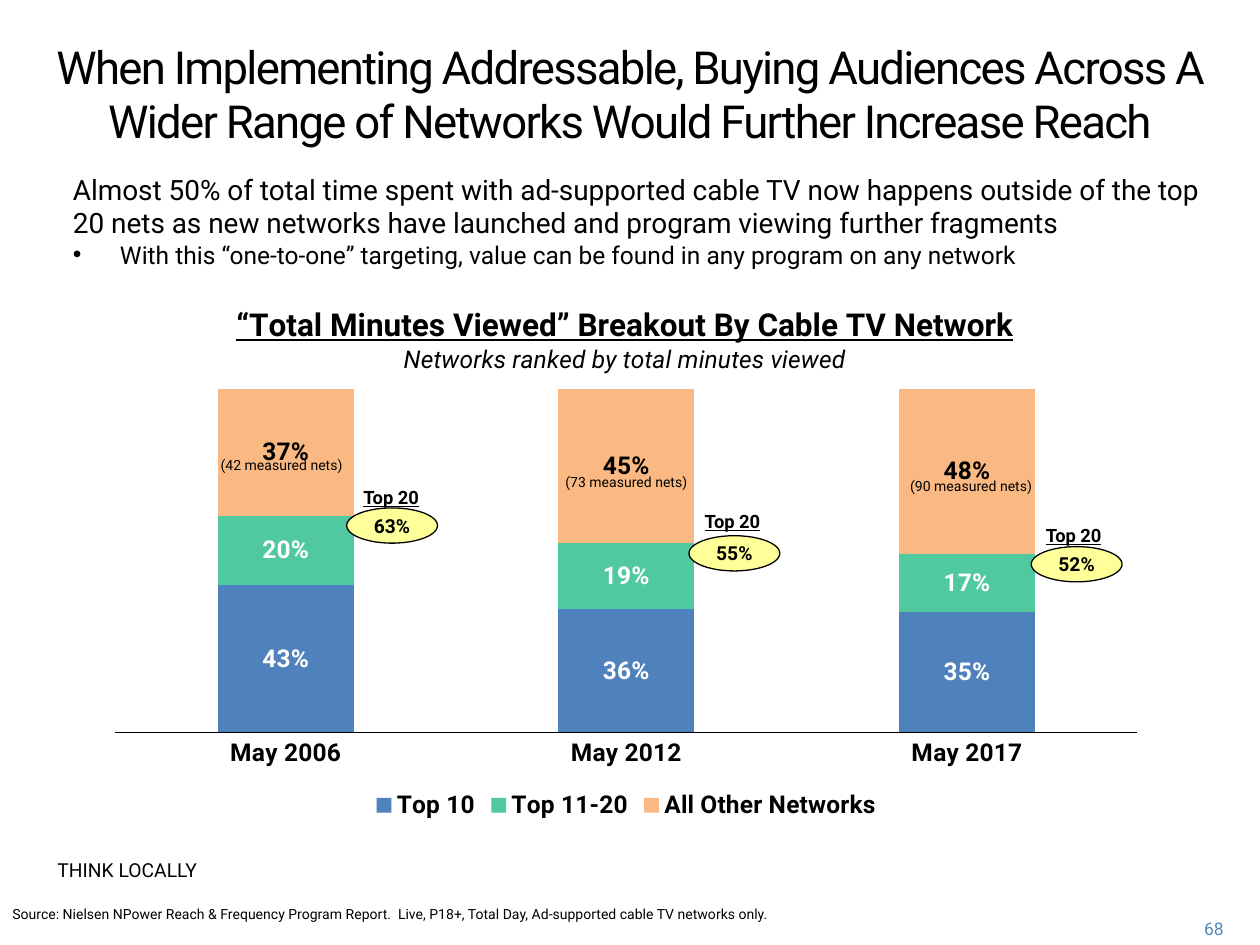
from collections import namedtuple

from lxml import etree
from pptx import Presentation
from pptx import util as u
from pptx.chart.data import CategoryChartData
from pptx.dml.color import RGBColor
from pptx.enum import chart as ch, shapes, text
from pptx.oxml import parse_xml
from pptx.oxml.ns import nsdecls, qn

BLACK = RGBColor(0, 0, 0)
WHITE = RGBColor(0xFF, 0xFF, 0xFF)
PAGE_BLUE = RGBColor(0x50, 0x8A, 0xBA)
BLUE = RGBColor(0x4F, 0x81, 0xBD)
GREEN = RGBColor(0x50, 0xC8, 0xA0)
ORANGE = RGBColor(0xFA, 0xB9, 0x82)
YELLOW = RGBColor(0xFF, 0xFF, 0x99)
FONT = "Roboto"
LEFT, CENTER, RIGHT = text.PP_ALIGN.LEFT, text.PP_ALIGN.CENTER, text.PP_ALIGN.RIGHT

Box = namedtuple("Box", "left top width height")
Callout = namedtuple("Callout", "share nets oval_top label_top nets_top")

MONTHS = ["May 2006", "May 2012", "May 2017"]
SERIES = [
    ("Top 10", [0.43, 0.36, 0.35], BLUE, WHITE),
    ("Top 11-20", [0.20, 0.19, 0.17], GREEN, WHITE),
    ("All Other Networks", [0.37, 0.45, 0.48], ORANGE, BLACK),
]
CALLOUTS = [
    Callout("63%", 42, 4.60, 4.04, 3.43),
    Callout("55%", 73, 5.16, 4.52, 3.78),
    Callout("52%", 90, 5.38, 4.80, 3.86),
]


def style(font, size, color=BLACK, bold=False, italic=False, underline=False):
    """Apply the slide's typeface and the given look to a font."""
    font.name, font.size, font.color.rgb = FONT, u.Pt(size), color
    font.bold, font.italic, font.underline = bold, italic, underline


def in_cm(box):
    """Turn a box in centimetres into four lengths."""
    return [u.Cm(length) for length in box]


def add_text(slide, box, words, size, align=LEFT, **look):
    """Place a wrapped text box with one paragraph and return its frame."""
    frame = slide.shapes.add_textbox(*in_cm(box)).text_frame
    frame.word_wrap = True
    frame.text = words
    paragraph = frame.paragraphs[0]
    paragraph.alignment = align
    style(paragraph.runs[0].font, size, **look)
    return frame


def add_headline(slide, box):
    """Place the slide title, centred and tightly spaced."""
    headline = add_text(
        slide, box, "When Implementing Addressable, Buying Audiences Across A "
        "Wider Range of Networks Would Further Increase Reach", 26, CENTER)
    headline.margin_left = headline.margin_right = 0
    headline.margin_top = headline.margin_bottom = 0
    headline.vertical_anchor = text.MSO_ANCHOR.MIDDLE
    headline.paragraphs[0].runs[0].font._element.set("spc", "-100")


def add_summary(slide, box):
    """Place the lead sentence and its bullet."""
    summary = add_text(
        slide, box, "Almost 50% of total time spent with ad-supported cable TV now "
        "happens outside of the top 20 nets as new networks have launched and "
        "program viewing further fragments", 16)
    point = summary.add_paragraph()
    point.text = ("With this “one-to-one” targeting, value can be found "
                  "in any program on any network")
    properties = point._p.get_or_add_pPr()
    indent = u.Cm(0.95)
    properties.set("marL", str(indent))
    properties.set("indent", str(-indent))
    etree.SubElement(properties, qn("a:buFont")).set("typeface", "Arial")
    etree.SubElement(properties, qn("a:buChar")).set("char", "•")
    style(point.runs[0].font, 14)


def manual_layout(inner=False, **fractions):
    """Build a chart layout element from fractions of the chart area."""
    target = '<c:layoutTarget val="inner"/>' if inner else ""
    modes = "".join(f'<c:{key}Mode val="edge"/>' for key in "xy")
    values = "".join(f'<c:{key} val="{value}"/>' for key, value in fractions.items())
    return parse_xml(f'<c:layout {nsdecls("c")}><c:manualLayout>{target}{modes}{values}'
                     "</c:manualLayout></c:layout>")


def set_layout(parent, layout, position):
    """Replace the layout of a chart part."""
    for old in parent.findall(qn("c:layout")):
        parent.remove(old)
    parent.insert(position, layout)


def add_chart_title(chart):
    """Write the heading and subheading of the chart."""
    title = chart.chart_title
    heading = title.text_frame
    heading.text = "“Total Minutes Viewed” Breakout By Cable TV Network"
    style(heading.paragraphs[0].runs[0].font, 18, bold=True, underline=True)
    subheading = heading.add_paragraph()
    subheading.text = "Networks ranked by total minutes viewed"
    style(subheading.runs[0].font, 14, italic=True)
    title.include_in_layout = False
    set_layout(title._element, manual_layout(x=0.13, y=0.04), 1)


def add_viewing_chart(slide, box):
    """Place the stacked chart of viewing shares."""
    data = CategoryChartData(number_format="0%")
    data.categories = MONTHS
    for name, shares, _, _ in SERIES:
        data.add_series(name, shares)
    chart = slide.shapes.add_chart(
        ch.XL_CHART_TYPE.COLUMN_STACKED_100, *in_cm(box), data).chart
    style(chart.font, 10)
    add_chart_title(chart)

    plot = chart.plots[0]
    plot.gap_width, plot.overlap, plot.vary_by_categories = 150, 100, False
    for series, (_, _, fill, label_color) in zip(plot.series, SERIES):
        series.format.fill.solid()
        series.format.fill.fore_color.rgb = fill
        labels = series.data_labels
        labels.show_value = True
        labels.position = ch.XL_LABEL_POSITION.CENTER
        labels.number_format, labels.number_format_is_linked = "0%", False
        style(labels.font, 14, label_color, bold=True)

    months = chart.category_axis
    months.major_tick_mark = ch.XL_TICK_MARK.NONE
    months.format.line.color.rgb = BLACK
    months.format.line.width = u.Pt(1)
    style(months.tick_labels.font, 14, bold=True)
    chart.value_axis.visible = False
    chart.value_axis.has_major_gridlines = False
    chart.value_axis.maximum_scale = 1

    chart.has_legend = True
    chart.legend.position = ch.XL_LEGEND_POSITION.BOTTOM
    chart.legend.include_in_layout = False
    style(chart.legend.font, 14, bold=True)
    set_layout(plot._element.getparent(),
               manual_layout(inner=True, x=0.02, y=0.2, w=0.96, h=0.63), 0)


def add_callouts(slide, box):
    """Place the top-20 totals and network counts beside the columns."""
    for index, callout in enumerate(CALLOUTS):
        oval = slide.shapes.add_shape(
            shapes.MSO_SHAPE.OVAL,
            *in_cm(Box(box.left + 5.09 + 6.9 * index, box.top + callout.oval_top, 1.83, 0.71)))
        oval.shadow.inherit = False
        oval.fill.solid()
        oval.fill.fore_color.rgb = YELLOW
        oval.line.color.rgb = BLACK
        oval.line.width = u.Pt(0.75)
        share = oval.text_frame
        share.text = callout.share
        share.word_wrap = False
        share.vertical_anchor = text.MSO_ANCHOR.MIDDLE
        share.paragraphs[0].alignment = CENTER
        style(share.paragraphs[0].runs[0].font, 11, bold=True)

        add_text(slide, Box(box.left + 4.88 + 6.88 * index, box.top + callout.label_top,
                            2.21, 0.74),
                 "Top 20", 10.5, CENTER, bold=True, underline=True)
        add_text(slide, Box(box.left + 2.27 + 6.95 * index, box.top + callout.nets_top,
                            3.02, 0.61),
                 f"({callout.nets} measured nets)", 8, CENTER)


def add_footer(slide, box):
    """Place the section name, source line and page number."""
    add_text(slide, Box(box.left + 0.91, box.top, 4.78, 1.19), "THINK LOCALLY", 11)
    add_text(slide, Box(box.left, box.top + 0.97, 23.37, 0.61),
             "Source: Nielsen NPower Reach & Frequency Program Report.\u00a0 Live, P18+, "
             "Total Day, Ad-supported cable TV networks only.".replace("\u00a0", " "), 8)
    add_text(slide, Box(box.left + 23.37, box.top + 1.22, 1.55, 0.64),
             "68", 10, RIGHT, color=PAGE_BLUE)


def main():
    """Build and save the slide."""
    deck = Presentation()
    deck.slide_width, deck.slide_height = u.Cm(25.4), u.Cm(19.05)
    slide = deck.slides.add_slide(deck.slide_layouts[6])
    chart_box = Box(1.9, 5.64, 21.46, 11)
    add_headline(slide, Box(0.51, 0.76, 24.38, 2.24))
    add_viewing_chart(slide, chart_box)
    add_callouts(slide, chart_box)
    add_summary(slide, Box(1.22, 3.35, 23.37, 2.24))
    add_footer(slide, Box(0, 17.17, 25.4, 1.88))
    deck.save("out.pptx")


if __name__ == "__main__":
    main()
